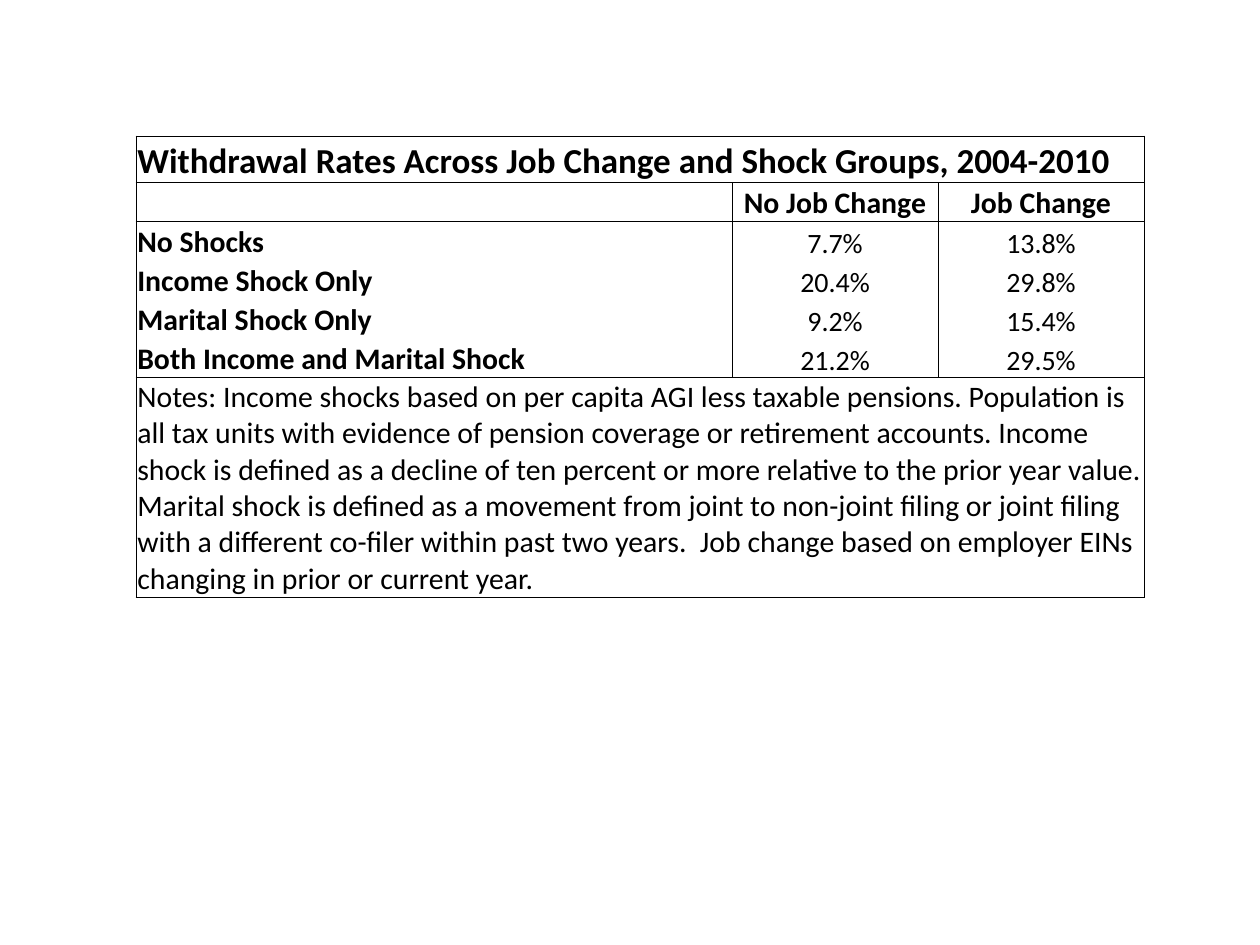
from pptx import Presentation, util as u
from pptx.dml.color import RGBColor
from pptx.enum import text
from pptx.oxml.ns import qn
from lxml import etree

COLORS = {"ink": "000000"}
FONT = "Calibri"
TITLE = "Withdrawal Rates Across Job Change and Shock Groups, 2004-2010"
HEADER = ("", "No Job Change", "Job Change")
RATES = [
    ("No Shocks", "7.7%", "13.8%"),
    ("Income Shock Only", "20.4%", "29.8%"),
    ("Marital Shock Only", "9.2%", "15.4%"),
    ("Both Income and Marital Shock", "21.2%", "29.5%"),
]
NOTES = (
    "Notes: Income shocks based on per capita AGI less taxable pensions. "
    "Population is all tax units with evidence of pension coverage or retirement accounts. "
    "Income shock is defined as a decline of ten percent or more relative to the prior year value. "
    "Marital shock is defined as a movement from joint to non-joint filing or joint filing "
    "with a different co-filer within past two years.  "
    "Job change based on employer EINs changing in prior or current year."
)
ROWS = [(TITLE, "", ""), HEADER, *RATES, (NOTES, "", "")]
LAST = len(ROWS) - 1
LEFT = TOP = 1.08
COL_WIDTHS = (4.73, 1.635, 1.635)
ROW_HEIGHTS = [0.37] + [0.31] * (LAST - 1) + [1.74]


def write(cell, content, size=17, bold=False, align=text.PP_ALIGN.LEFT):
    cell.margin_left = cell.margin_right = cell.margin_top = u.Inches(0.01)
    cell.margin_bottom = 0
    cell.vertical_anchor = text.MSO_ANCHOR.BOTTOM
    p = cell.text_frame.paragraphs[0]
    p.alignment = align
    r = p.add_run()
    r.text = content
    r.font.name, r.font.size, r.font.bold = FONT, u.Pt(size), bold
    r.font.color.rgb = RGBColor.from_string(COLORS["ink"])


def set_borders(cell, sides, width=0.5):
    """Draw the sides named in a string of L, R, T, B and clear the others."""
    props = cell._tc.get_or_add_tcPr()
    for side in "LRTB":
        ln = etree.SubElement(props, qn(f"a:ln{side}"), w=str(u.Pt(width)))
        if side in sides:
            fill = etree.SubElement(ln, qn("a:solidFill"))
            etree.SubElement(fill, qn("a:srgbClr"), val=COLORS["ink"])
        else:
            etree.SubElement(ln, qn("a:noFill"))


def cell_format(row, col):
    if row == 0:
        return dict(size=20, bold=True)
    if row == LAST:
        return {}
    align = text.PP_ALIGN.CENTER if col else text.PP_ALIGN.LEFT
    is_label = row == 1 or col == 0
    return dict(size=17 if is_label else 16, bold=is_label, align=align)


def cell_sides(row, col):
    if row in (0, LAST):
        return "TB" + ("L" if col == 0 else "") + ("R" if col == 2 else "")
    return "LR" + ("T" if row <= 2 else "") + ("B" if row in (1, LAST - 1) else "")


prs = Presentation()
prs.slide_width, prs.slide_height = u.Inches(10), u.Inches(7.5)
s = prs.slides.add_slide(prs.slide_layouts[6])

table = s.shapes.add_table(
    len(ROWS), len(HEADER), u.Inches(LEFT), u.Inches(TOP),
    u.Inches(sum(COL_WIDTHS)), u.Inches(sum(ROW_HEIGHTS))).table
table.first_row = table.horz_banding = False
for column, width in zip(table.columns, COL_WIDTHS):
    column.width = u.Inches(width)
for line, height in zip(table.rows, ROW_HEIGHTS):
    line.height = u.Inches(height)

for row, contents in enumerate(ROWS):
    for col, content in enumerate(contents):
        cell = table.cell(row, col)
        write(cell, content, **cell_format(row, col))
        set_borders(cell, cell_sides(row, col))
        cell.fill.background()
for row in (0, LAST):
    table.cell(row, 0).merge(table.cell(row, 2))
    set_right = table.cell(row, 0)._tc.tcPr.find(qn("a:lnR"))
    set_right.getparent().replace(
        set_right, etree.fromstring(etree.tostring(table.cell(row, 2)._tc.tcPr.find(qn("a:lnR")))))

prs.save("out.pptx")
